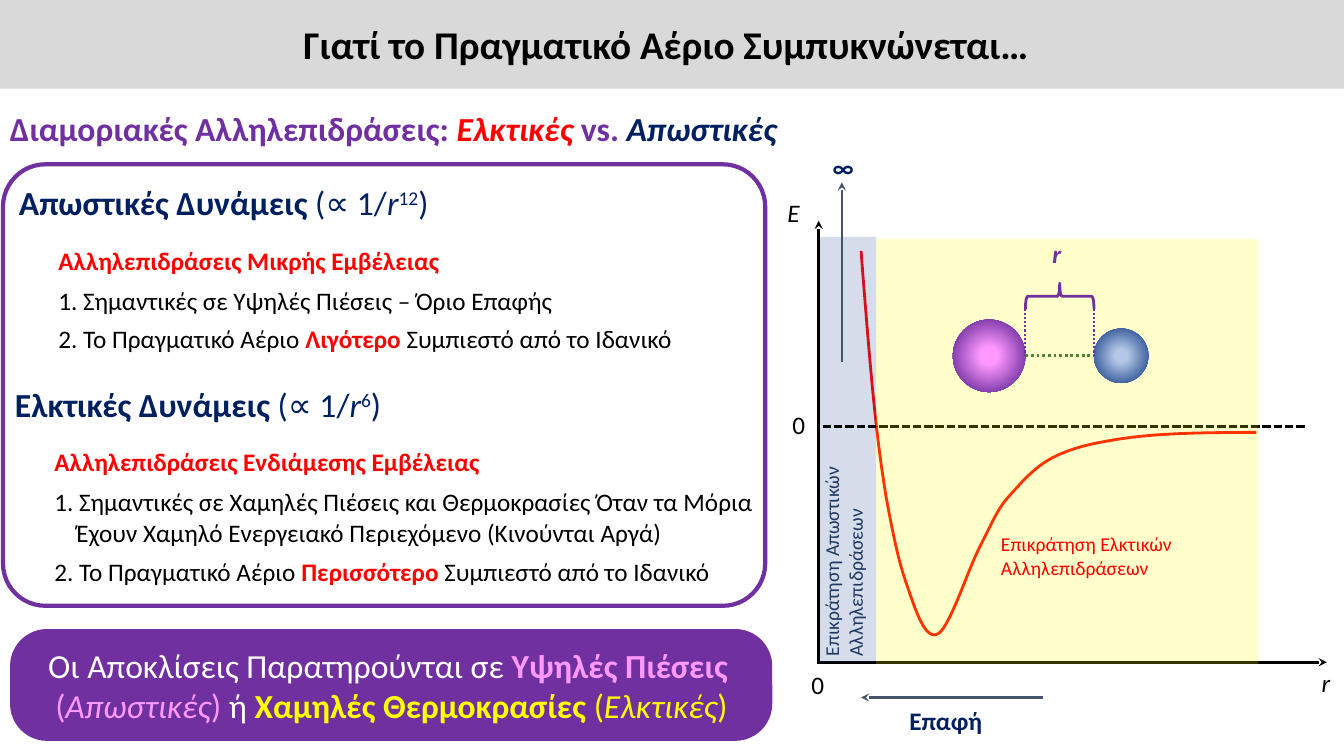
from dataclasses import dataclass

from lxml import etree
from pptx import Presentation
from pptx.dml.color import RGBColor
from pptx.enum.dml import MSO_LINE
from pptx.enum.shapes import MSO_CONNECTOR, MSO_SHAPE
from pptx.oxml.ns import qn
from pptx.util import Inches, Pt

RECT, ROUND = MSO_SHAPE.RECTANGLE, MSO_SHAPE.ROUNDED_RECTANGLE
OVAL, BRACE = MSO_SHAPE.OVAL, MSO_SHAPE.LEFT_BRACE
STRAIGHT = MSO_CONNECTOR.STRAIGHT
DASH, DOT = MSO_LINE.SQUARE_DOT, MSO_LINE.ROUND_DOT


@dataclass(frozen=True)
class Theme:
    """Font, type sizes and colours of the slide."""
    font: str = "Calibri"
    title: int = 28
    head: int = 24
    body: int = 18
    small: int = 14
    black: str = "000000"
    white: str = "FFFFFF"
    gray: str = "D9D9D9"
    slate: str = "44546A"
    purple: str = "7030A0"
    pink: str = "FF99FF"
    red: str = "FF0000"
    yellow: str = "FFFF00"
    green: str = "548235"
    navy: str = "002060"
    ink: str = "203864"
    blue: str = "2F5597"
    pale: str = "B4C7E7"


def span(text, **form):
    """Pair a text with its format: size, color, bold, ital, sup."""
    return text, form


def child(node, tag, **attrs):
    """Append a drawing element to a node."""
    return etree.SubElement(node, qn(f"a:{tag}"), attrs)


def curve(start, parts, steps=12):
    """List the points along a chain of cubic curves."""
    points = [start]
    for b, c, d in parts:
        a = points[-1]
        for i in range(1, steps + 1):
            t = i / steps
            u = 1 - t
            points.append(tuple(
                u**3 * p + 3 * u * u * t * q + 3 * u * t * t * r + t**3 * s
                for p, q, r, s in zip(a, b, c, d)))
    return points


class Board:
    """Draws styled elements on the current slide."""

    def __init__(self, slide, theme):
        """Keep the slide and its theme."""
        self.slide, self.theme = slide, theme

    def text(self, box, *paras, turn=0, indent=0, **base):
        """Add a text box; indent shifts every line after the first."""
        shape = self.slide.shapes.add_textbox(*map(Inches, box))
        shape.rotation = turn
        frame = shape.text_frame
        frame.word_wrap = True
        for i, spans in enumerate(paras):
            para = frame.paragraphs[0] if i == 0 else frame.add_paragraph()
            if i and indent:
                para._p.get_or_add_pPr().set("marL", str(Inches(indent)))
            for words, form in spans:
                self.style(para.add_run(), words, **{**base, **form})

    def style(self, run, words, size=None, color=None, bold=False, ital=False, sup=False):
        """Fill one run with formatted words."""
        run.text = words
        font = run.font
        font.name, font.size = self.theme.font, Pt(size or self.theme.body)
        font.bold, font.italic = bold, ital
        font.color.rgb = RGBColor.from_string(color or self.theme.black)
        if sup:
            run._r.get_or_add_rPr().set("baseline", "30000")

    def stroke(self, line, color, width, dash=None):
        """Set the colour, width and dash of a line."""
        line.color.rgb = RGBColor.from_string(color)
        line.width = Pt(width)
        if dash:
            line.dash_style = dash

    def shape(self, kind, box, fill=None, line=None, width=2, alpha=None, adj=None, turn=0):
        """Add a preset shape with an optional fill and outline."""
        shape = self.slide.shapes.add_shape(kind, *map(Inches, box))
        shape.shadow.inherit = False
        shape.rotation = turn
        if adj is not None:
            shape.adjustments[0] = adj
        if fill:
            shape.fill.solid()
            shape.fill.fore_color.rgb = RGBColor.from_string(fill)
        else:
            shape.fill.background()
        if alpha:
            tint = shape._element.spPr.find(qn("a:solidFill"))[0]
            child(tint, "alpha", val=str(alpha * 1000))
        if line:
            self.stroke(shape.line, line, width)
        else:
            shape.line.fill.background()
        return shape

    def ball(self, box, core, rim):
        """Add a sphere shaded from its core to its rim."""
        shape = self.shape(OVAL, box)
        shape.fill.gradient()
        grad = shape._element.spPr.find(qn("a:gradFill"))
        for part in list(grad):
            grad.remove(part)
        stops = child(grad, "gsLst")
        for pos, color in ((17, core), (81, rim)):
            child(child(stops, "gs", pos=str(pos * 1000)), "srgbClr", val=color)
        child(child(grad, "path", path="circle"), "fillToRect",
              **dict.fromkeys("ltrb", "50000"))

    def line(self, start, end, color, width=2.0, dash=None, arrow=False):
        """Add a straight line, with an arrowhead at its end if asked."""
        link = self.slide.shapes.add_connector(STRAIGHT, *map(Inches, start + end))
        self.stroke(link.line, color, width, dash)
        if arrow:
            child(link.line._get_or_add_ln(), "tailEnd", type="stealth")
        child(link._element.spPr, "effectLst")

    def trace(self, points, color, width=2):
        """Add an open outline through the points."""
        spots = [(Inches(x), Inches(y)) for x, y in points]
        build = self.slide.shapes.build_freeform(*spots[0])
        build.add_line_segments(spots[1:], close=False)
        shape = build.convert_to_shape()
        shape.shadow.inherit = False
        shape.fill.background()
        self.stroke(shape.line, color, width)

    def force(self, left, top, name, power, reach, first, degree, drop):
        """Add the heading and three points of one kind of force."""
        th, inner = self.theme, left + 0.39
        self.text((left, top, 4.33, 0.5),
                  [span(name, bold=True), span("(∝ 1/"), span("r", ital=True),
                   span(power, sup=True), span(")")], size=th.head, color=th.navy)
        self.text((inner, top + 0.62, 4.46, 0.4), [span(reach)], color=th.red, bold=True)
        self.text((inner, top + 1.02, 7.22, 0.4), *[[span(row)] for row in first], indent=0.22)
        self.text((inner, top + drop, 6.75, 0.4),
                  [span("2. Το Πραγματικό Αέριο "), span(degree, color=th.red, bold=True),
                   span(" Συμπιεστό από το Ιδανικό")])


def graph(board):
    """Draw the energy curve and its labels."""
    th = board.theme
    left, base, zero = 8.12, 6.57, 4.23
    board.text((8.16, 1.46, 0.38, 0.4), [span("∞")], color=th.navy, bold=True)
    board.line((8.1, base), (13.16, base), th.black, arrow=True)
    board.trace(curve((8.54, 2.49), [
        ((8.58, 3), (8.62, 3.52), (8.66, 3.92)),
        ((8.7, 4.33), (8.74, 4.63), (8.79, 4.94)),
        ((8.85, 5.26), (8.91, 5.57), (8.99, 5.79)),
        ((9.07, 6.02), (9.17, 6.36), (9.3, 6.29)),
        ((9.42, 6.23), (9.6, 5.65), (9.72, 5.42)),
        ((9.84, 5.19), (9.89, 5.05), (10.01, 4.92)),
        ((10.13, 4.79), (10.25, 4.64), (10.44, 4.54)),
        ((10.62, 4.45), (10.8, 4.4), (11.14, 4.35)),
        ((11.48, 4.3), (11.9, 4.29), (12.46, 4.29))]), th.red)
    board.shape(RECT, (left, 2.35, 0.57, 4.22), th.blue, alpha=20)
    board.line((12.94, zero), (left, zero), th.black, dash=DASH)
    board.text((7.19, 5.07, 2.43, 0.65), [span("Επικράτηση Απωστικών")],
               [span("Αλληλεπιδράσεων")], turn=270, size=th.small, color=th.ink)
    board.line((left, base), (left, 2.19), th.black, arrow=True)
    for x, y, label, ital in ((7.76, 4.01, "0", False), (7.71, 1.91, "Ε", True),
                              (13.01, 6.57, "r", True), (7.95, 6.59, "0", False)):
        board.text((x, y, 0.38, 0.46), [span(label)], ital=ital)
    board.shape(RECT, (8.69, 2.37, 3.79, 4.22), th.yellow, alpha=20)
    board.text((9.83, 5.23, 2.23, 0.65), [span("Επικράτηση Ελκτικών")],
               [span("Αλληλεπιδράσεων")], size=th.small, color=th.red)
    board.ball((9.45, 3.17, 0.72, 0.72), th.pink, th.purple)
    board.ball((10.85, 3.26, 0.54, 0.54), th.pale, th.blue)
    board.shape(BRACE, (10.38, 2.6, 0.26, 0.68), line=th.purple, turn=90)
    board.text((10.34, 2.32, 0.33, 0.46), [span("r")], color=th.purple, bold=True, ital=True)
    board.line((10.17, 3.53), (10.85, 3.53), th.green, dash=DOT)
    for x in (10.17, 10.85):
        board.line((x, 3.06), (x, 3.52), th.purple, 1.5, DOT)
    board.line((10.34, 6.92), (8.54, 6.92), th.slate, 1.5, arrow=True)
    board.text((8.92, 6.95, 1.06, 0.46), [span("Επαφή")], color=th.navy, bold=True)
    board.line((8.35, 3.59), (8.35, 1.81), th.slate, 1.5, arrow=True)


def main():
    """Build and save the slide."""
    deck = Presentation()
    deck.slide_width, deck.slide_height = Inches(13.33), Inches(7.5)
    th = Theme()
    board = Board(deck.slides.add_slide(deck.slide_layouts[6]), th)
    board.shape(ROUND, (0.1, 6.24, 7.56, 1.11), th.purple, adj=0.331)
    board.shape(RECT, (0, 0, 13.33, 0.88), th.gray)
    board.text((2.91, 0.15, 7.51, 0.57), [span("Γιατί το Πραγματικό Αέριο Συμπυκνώνεται…")],
               size=th.title, bold=True)
    graph(board)
    board.text((0, 1.02, 7.87, 0.5),
               [span("Διαμοριακές Αλληλεπιδράσεις: "), span("Ελκτικές ", color=th.red, ital=True),
                span("vs. "), span("Απωστικές", color=th.navy, ital=True)],
               size=th.head, color=th.purple, bold=True)
    board.force(0.09, 1.76, "Απωστικές Δυνάμεις ", "12", "Αλληλεπιδράσεις Μικρής Εμβέλειας",
                ["1. Σημαντικές σε Υψηλές Πιέσεις – Όριο Επαφής"], "Λιγότερο", 1.4)
    board.force(0.05, 3.76, "Ελκτικές Δυνάμεις ", "6", "Αλληλεπιδράσεις Ενδιάμεσης Εμβέλειας",
                ["1. Σημαντικές σε Χαμηλές Πιέσεις και Θερμοκρασίες Όταν τα Μόρια",
                 "Έχουν Χαμηλό Ενεργειακό Περιεχόμενο (Κινούνται Αργά)"], "Περισσότερο", 1.71)
    board.shape(ROUND, (0.03, 1.63, 7.56, 4.38), line=th.purple, width=3, adj=0.096)
    pink, gold = {"color": th.pink}, {"color": th.yellow}
    board.text((0.38, 6.35, 7.01, 0.91),
               [span("Οι Αποκλίσεις Παρατηρούνται σε "), span("Υψηλές Πιέσεις", bold=True, **pink)],
               [span("(", **pink), span("Απωστικές", ital=True, **pink), span(")", **pink),
                span(" ή "), span("Χαμηλές Θερμοκρασίες ", bold=True, **gold),
                span("(", **gold), span("Ελκτικές", ital=True, **gold), span(")", **gold)],
               size=th.head, color=th.white, indent=0.07)
    deck.save("out.pptx")


if __name__ == "__main__":
    main()
